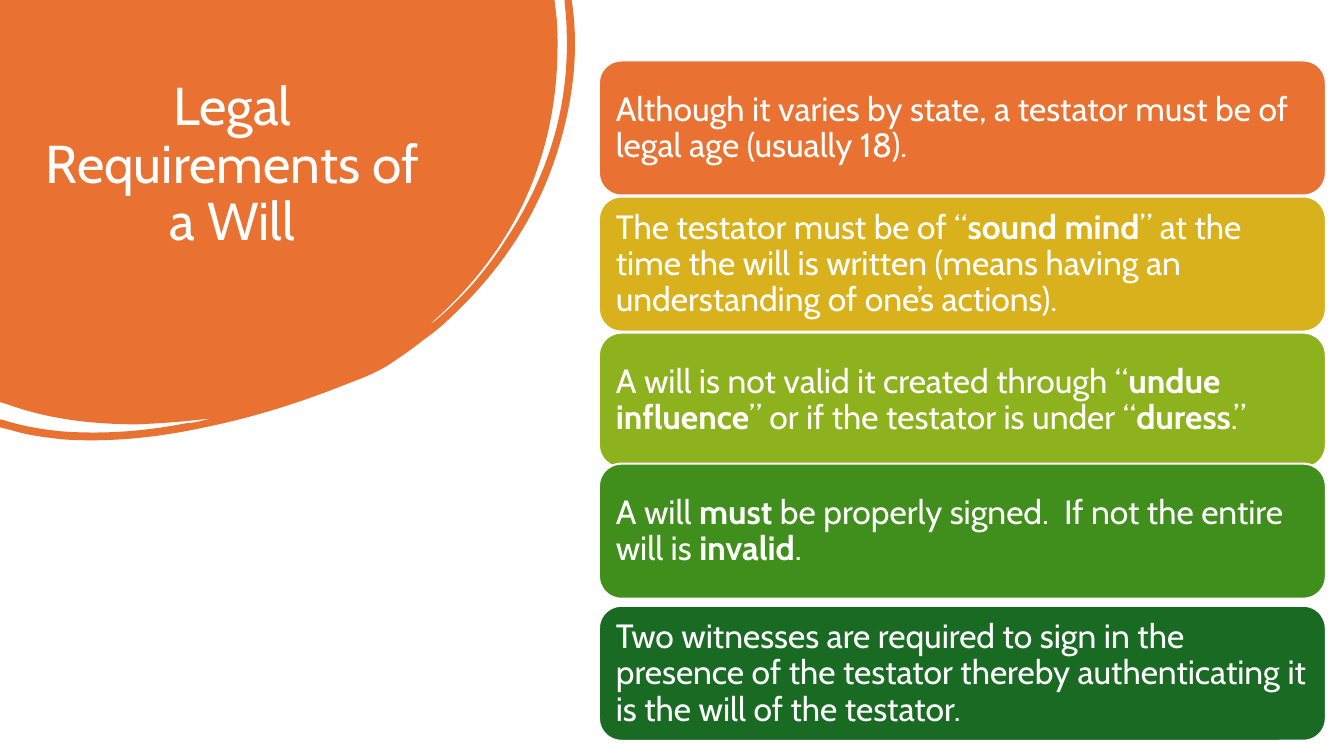
from dataclasses import dataclass

from lxml import etree
from pptx import Presentation
from pptx.dml.color import RGBColor
from pptx.enum.shapes import MSO_SHAPE
from pptx.enum.text import MSO_ANCHOR, MSO_AUTO_SIZE, PP_ALIGN
from pptx.oxml.ns import qn
from pptx.util import Inches, Pt

ROUNDED = MSO_SHAPE.ROUNDED_RECTANGLE
LEFT, CENTER = PP_ALIGN.LEFT, PP_ALIGN.CENTER
TOP, MIDDLE = MSO_ANCHOR.TOP, MSO_ANCHOR.MIDDLE
NO_AUTOFIT = MSO_AUTO_SIZE.NONE
TITLE_ONLY_LAYOUT = 5


@dataclass(frozen=True)
class Theme:
    font: str = "Cabin"
    title_size: int = 38
    card_size: int = 24
    line_spacing: float = 0.9
    white: str = "FFFFFF"
    orange: str = "E97132"
    gold: str = "D8B11D"
    lime: str = "8EB21E"
    green: str = "408E1C"
    forest: str = "196B24"


THEME = Theme()

# Top edge in inches, fill, text with **bold** words
REQUIREMENTS = [
    (0.6, THEME.orange, "Although it varies by state, a testator must be of legal age (usually 18)."),
    (1.95, THEME.gold, "The testator must be of “**sound mind**” at the time the will is written "
                       "(means having an understanding of one’s actions)."),
    (3.3, THEME.lime, "A will is not valid it created through “**undue influence**” "
                      "or if the testator is under “**duress**.”"),
    (4.6, THEME.green, "A will **must** be properly signed.  If not the entire will is **invalid**."),
    (6.01, THEME.forest, "Two witnesses are required to sign in the presence of the testator "
                         "thereby authenticating it is the will of the testator."),
]

# Inches: two numbers end a straight line, six describe a cubic curve
BLOB_SIZE = (5.71, 4.37)
BLOB_OUTLINE = [
    (0, 0), (5.5, 0), (5.52, 0.17),
    (5.53, 0.26, 5.53, 0.36, 5.53, 0.45),
    (5.53, 1.01, 5.42, 1.54, 5.18, 2.04),
    (4.96, 2.49, 4.65, 2.88, 4.27, 3.21),
    (4.29, 3.21, 4.3, 3.19, 4.32, 3.18),
    (4.59, 2.95, 4.82, 2.69, 5.01, 2.39),
    (5.43, 1.76, 5.65, 1.07, 5.62, 0.3),
    (5.62, 0.21, 5.61, 0.12, 5.6, 0.03),
    (5.6, 0), (5.67, 0), (5.68, 0.07),
    (5.74, 0.54, 5.68, 1.02, 5.53, 1.5),
    (5.33, 2.14, 4.97, 2.68, 4.48, 3.14),
    (4.39, 3.23, 4.29, 3.31, 4.19, 3.38),
    (4.09, 3.46, 3.99, 3.53, 3.87, 3.61),
    (3.75, 3.69, 3.6, 3.75, 3.44, 3.81),
    (2.99, 3.99, 2.52, 4.14, 2.03, 4.24),
    (1.57, 4.34, 1.1, 4.39, 0.63, 4.36),
    (0.45, 4.34, 0.28, 4.32, 0.12, 4.27),
    (0, 4.24), (0, 4.16), (0.04, 4.17),
    (0.23, 4.23, 0.42, 4.26, 0.61, 4.28),
    (1.03, 4.31, 1.43, 4.28, 1.84, 4.2),
    (1.89, 4.2, 1.93, 4.19, 1.98, 4.18),
    (2.02, 4.17, 2.06, 4.16, 2.1, 4.15),
    (1.86, 4.18, 1.61, 4.2, 1.36, 4.21),
    (0.92, 4.21, 0.48, 4.16, 0.07, 4.01),
    (0, 3.99),
]


def write_text(shape, text, *, size, align=LEFT, anchor=MIDDLE, inset=(0.1, 0.1)):
    """Fill the shape with one paragraph; words between ** are bold."""
    frame = shape.text_frame
    frame.word_wrap = True
    frame.auto_size = NO_AUTOFIT
    frame.vertical_anchor = anchor
    frame.margin_left = frame.margin_right = Inches(inset[0])
    frame.margin_top = frame.margin_bottom = Inches(inset[1])
    paragraph = frame.paragraphs[0]
    paragraph.alignment = align
    paragraph.line_spacing = THEME.line_spacing
    for index, part in enumerate(text.split("**")):
        run = paragraph.add_run()
        run.text = part
        run.font.name = THEME.font
        run.font.size = Pt(size)
        run.font.bold = index % 2 == 1
        run.font.color.rgb = RGBColor.from_string(THEME.white)


def paint(shape, fill):
    shape.shadow.inherit = False
    shape.fill.solid()
    shape.fill.fore_color.rgb = RGBColor.from_string(fill)


def bend_lines(shape, segments):
    """Replace straight path steps by cubic curves where a segment has control points."""
    steps = list(shape.element.iter(qn("a:lnTo")))
    for step, segment in zip(steps, segments):
        if len(segment) == 2:
            continue
        curve = etree.Element(qn("a:cubicBezTo"))
        for x, y in zip(segment[::2], segment[1::2]):
            etree.SubElement(curve, qn("a:pt"), x=str(Inches(x)), y=str(Inches(y)))
        step.getparent().replace(step, curve)


def add_blob(slide):
    start, *ends = [(Inches(segment[-2]), Inches(segment[-1])) for segment in BLOB_OUTLINE]
    builder = slide.shapes.build_freeform(*start)
    builder.add_line_segments(ends, close=True)
    blob = builder.convert_to_shape()
    bend_lines(blob, BLOB_OUTLINE[1:])
    blob.width, blob.height = map(Inches, BLOB_SIZE)
    outline = next(blob.element.iter(qn("a:path")))
    outline.set("w", str(blob.width))
    outline.set("h", str(blob.height))
    paint(blob, THEME.orange)
    blob.line.fill.background()
    return blob


def set_title(slide, text, blob):
    title = slide.shapes.title
    title.left, title.top = Inches(0.18), Inches(0.74)
    title.width, title.height = Inches(4.25), Inches(2.22)
    write_text(title, text, size=THEME.title_size, align=CENTER, anchor=TOP, inset=(0.1, 0.05))
    blob.element.addnext(title.element)


def add_card(group, top, fill, text):
    card = group.shapes.add_shape(ROUNDED, Inches(5.94), Inches(top), Inches(7.21), Inches(1.34))
    paint(card, fill)
    card.line.color.rgb = RGBColor.from_string(THEME.white)
    card.line.width = Pt(1.5)
    label = group.shapes.add_textbox(Inches(6.01), Inches(top + 0.07), Inches(7.08), Inches(1.21))
    write_text(label, text, size=THEME.card_size)


def main():
    presentation = Presentation()
    presentation.slide_width = Inches(13.33)
    presentation.slide_height = Inches(7.5)
    slide = presentation.slides.add_slide(presentation.slide_layouts[TITLE_ONLY_LAYOUT])
    blob = add_blob(slide)
    set_title(slide, "Legal Requirements of a Will", blob)
    cards = slide.shapes.add_group_shape()
    for top, fill, text in REQUIREMENTS:
        add_card(cards, top, fill, text)
    presentation.save("out.pptx")


if __name__ == "__main__":
    main()
